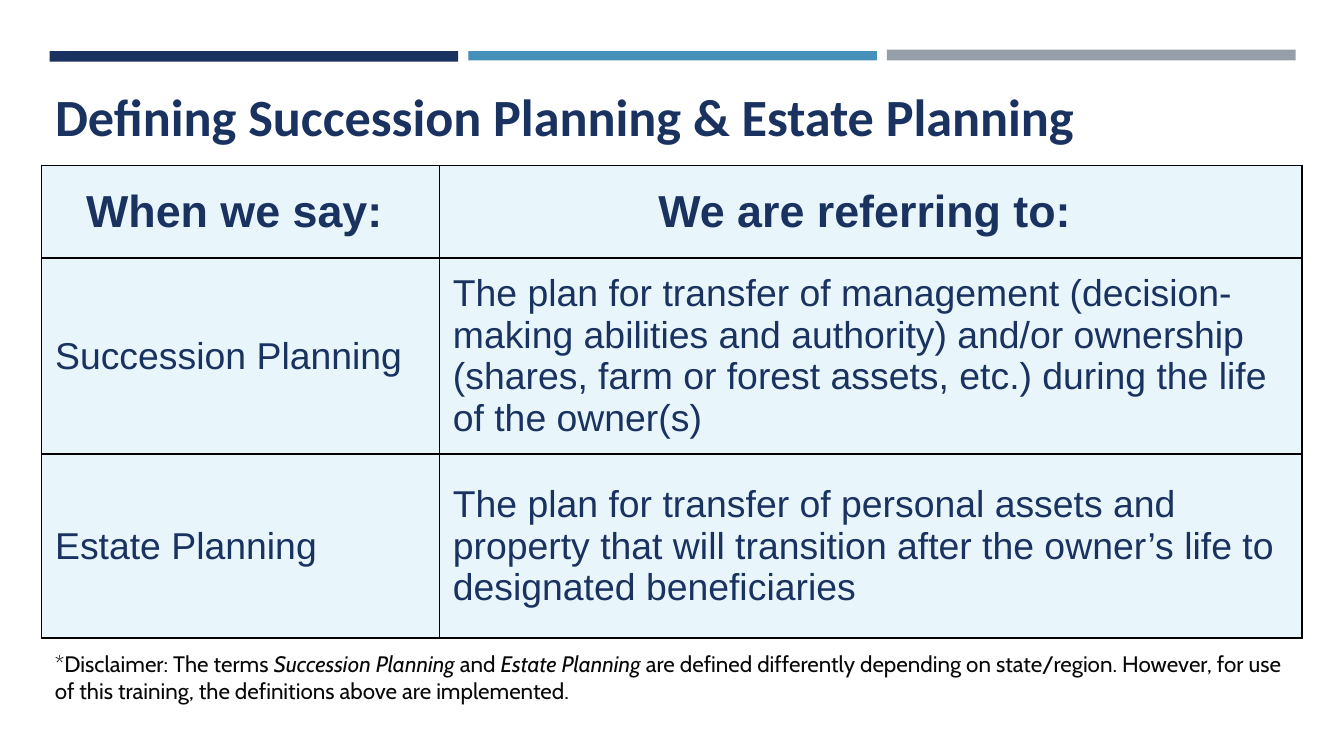
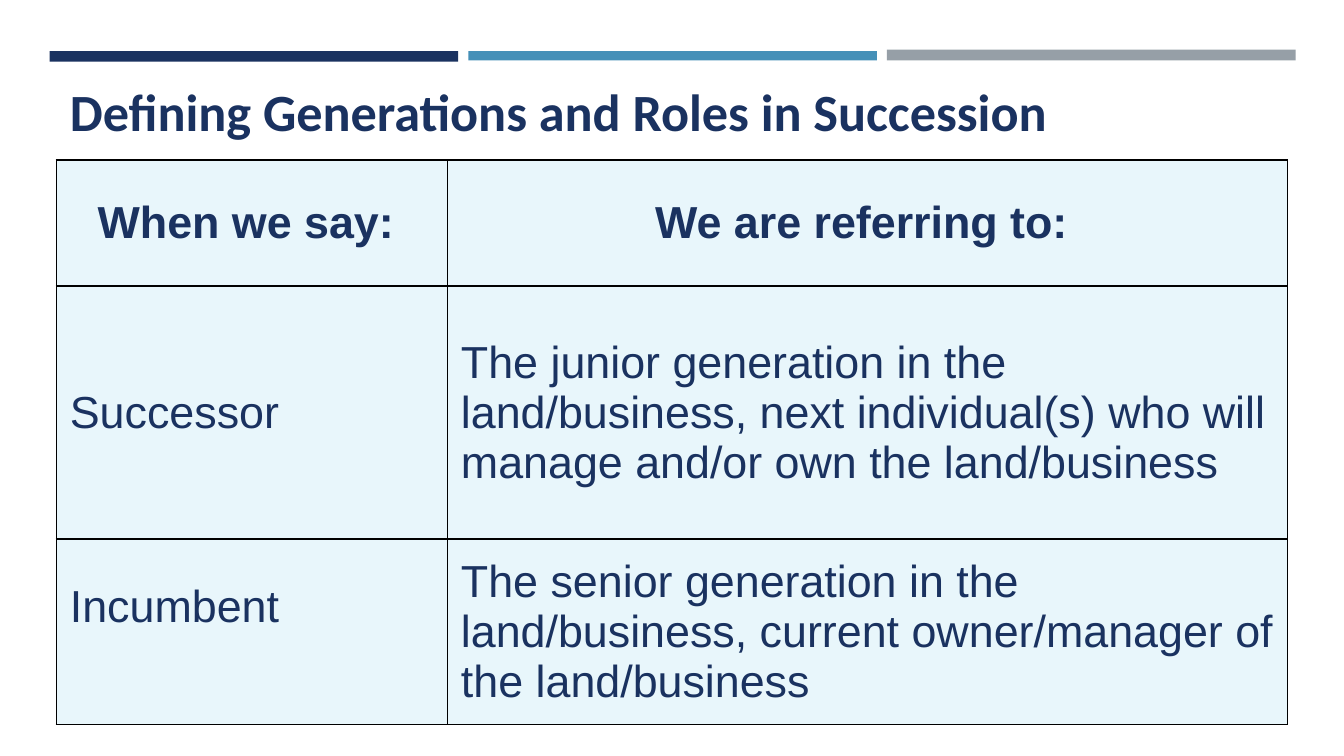
from dataclasses import dataclass

from lxml.etree import SubElement
from pptx import Presentation
from pptx.dml.color import RGBColor
from pptx.enum.shapes import MSO_SHAPE
from pptx.enum.text import MSO_ANCHOR, MSO_AUTO_SIZE, PP_ALIGN
from pptx.oxml.ns import qn
from pptx.presentation import Presentation as PresentationType
from pptx.slide import Slide
from pptx.table import _Cell as Cell
from pptx.text.text import TextFrame, _Paragraph as Paragraph
from pptx.util import Inches, Pt

COLORS = {
    "navy": "1A3260",
    "blue": "4590B8",
    "gray": "969FA7",
    "ice": "E8F6FB",
    "border": "000000",
    "ink": "080808",
}
GRID_COLUMNS = 100
GRID_ROWS = 56.25
SLIDE_WIDTH = Inches(10)
SLIDE_HEIGHT = Inches(5.625)
PADDING = 1
HEADER = ("When we say: ", "We are referring to: ")
HEADER_SIZE = 24


@dataclass(frozen=True)
class Area:
    left: float
    top: float
    width: float
    height: float

    def lengths(self) -> tuple[int, int, int, int]:
        return columns(self.left), rows(self.top), columns(self.width), rows(self.height)


@dataclass(frozen=True)
class Band:
    color: str
    top: float
    height: float


@dataclass(frozen=True)
class Definition:
    term: str
    meaning: str
    term_lift: float = 0


@dataclass(frozen=True)
class DefinitionSlide:
    title: str
    title_area: Area
    table_left: float
    table_top: float
    column_widths: tuple[float, ...]
    row_heights: tuple[float, ...]
    body_size: int
    definitions: tuple[Definition, ...]
    disclaimer: tuple[tuple[str, bool], ...] = ()


BANDS = (Band("navy", 3.8, 0.8), Band("blue", 3.8, 0.7), Band("gray", 3.7, 0.8))
BAND_LEFT = 3.7
BAND_WIDTH = 30.4
BAND_STEP = 31.15
DISCLAIMER_AREA = Area(3.1, 47.4, 93.8, 5)

SLIDES = (
    DefinitionSlide(
        title="Defining Succession Planning & Estate Planning",
        title_area=Area(3.1, 4.6, 93.8, 7.6),
        table_left=3.1,
        table_top=12.3,
        column_widths=(29.6, 64.2),
        row_heights=(6.9, 14.6, 13.7),
        body_size=20,
        definitions=(
            Definition(
                "Succession Planning",
                "The plan for transfer of management (decision-making abilities and "
                "authority) and/or ownership (shares, farm or forest assets, etc.) "
                "during the life of the owner(s)",
            ),
            Definition(
                "Estate Planning",
                "The plan for transfer of personal assets and property that will "
                "transition after the owner’s life to designated beneficiaries",
            ),
        ),
        disclaimer=(
            ("*Disclaimer: The terms ", False),
            ("Succession Planning ", True),
            ("and", False),
            (" Estate Planning ", True),
            (
                "are defined differently depending on state/region. However, for use "
                "of this training, the definitions above are implemented.",
                False,
            ),
        ),
    ),
    DefinitionSlide(
        title="Defining Generations and Roles in Succession",
        title_area=Area(4.2, 4.2, 89.5, 7.6),
        table_left=4.2,
        table_top=11.9,
        column_widths=(29.1, 62.5),
        row_heights=(9.4, 18.8, 13.8),
        body_size=24,
        definitions=(
            Definition(
                "Successor",
                "The junior generation in the land/business, next individual(s) who "
                "will manage and/or own the land/business",
            ),
            Definition(
                "Incumbent",
                "The senior generation in the land/business, current owner/manager "
                "of the land/business",
                term_lift=3.7,
            ),
        ),
    ),
)


def columns(count: float) -> int:
    return round(SLIDE_WIDTH * count / GRID_COLUMNS)


def rows(count: float) -> int:
    return round(SLIDE_HEIGHT * count / GRID_ROWS)


def color(name: str) -> RGBColor:
    return RGBColor.from_string(COLORS[name])


def set_font(paragraph: Paragraph, name: str, size: int, color_name: str, bold: bool = False) -> None:
    font = paragraph.font
    font.name = name
    font.size = Pt(size)
    font.bold = bold
    font.color.rgb = color(color_name)


def set_margins(target: TextFrame | Cell) -> None:
    target.margin_left = target.margin_right = columns(PADDING)
    target.margin_top = target.margin_bottom = rows(PADDING)


def prepare_frame(frame: TextFrame) -> None:
    set_margins(frame)
    frame.word_wrap = True
    frame.auto_size = MSO_AUTO_SIZE.NONE
    frame.vertical_anchor = MSO_ANCHOR.TOP


def draw_bands(slide: Slide) -> None:
    for index, band in enumerate(BANDS):
        area = Area(BAND_LEFT + index * BAND_STEP, band.top, BAND_WIDTH, band.height)
        shape = slide.shapes.add_shape(MSO_SHAPE.RECTANGLE, *area.lengths())
        shape.shadow.inherit = False
        shape.fill.solid()
        shape.fill.fore_color.rgb = color(band.color)
        shape.line.fill.background()


def draw_title(slide: Slide, text: str, area: Area) -> None:
    title = slide.shapes.title
    title.left, title.top, title.width, title.height = area.lengths()
    prepare_frame(title.text_frame)
    title.text_frame.text = text
    paragraph = title.text_frame.paragraphs[0]
    paragraph.alignment = PP_ALIGN.LEFT
    paragraph.line_spacing = 1.15
    set_font(paragraph, "Calibri", 28, "navy", bold=True)


def draw_borders(cell: Cell) -> None:
    properties = cell._tc.get_or_add_tcPr()
    for index, side in enumerate(("a:lnL", "a:lnR", "a:lnT", "a:lnB")):
        line = properties.makeelement(qn(side), {"w": str(Pt(1))})
        fill = SubElement(line, qn("a:solidFill"))
        SubElement(fill, qn("a:srgbClr"), val=COLORS["border"])
        properties.insert(index, line)


def fill_cell(cell: Cell, text: str, size: int, header: bool) -> None:
    cell.text = text
    cell.vertical_anchor = MSO_ANCHOR.MIDDLE
    set_margins(cell)
    cell.fill.solid()
    cell.fill.fore_color.rgb = color("ice")
    draw_borders(cell)
    paragraph = cell.text_frame.paragraphs[0]
    paragraph.alignment = PP_ALIGN.CENTER if header else PP_ALIGN.LEFT
    set_font(paragraph, "Arial", size, "navy", bold=header)


def draw_table(slide: Slide, content: DefinitionSlide) -> None:
    area = Area(
        content.table_left,
        content.table_top,
        sum(content.column_widths),
        sum(content.row_heights),
    )
    table = slide.shapes.add_table(
        len(content.row_heights), len(content.column_widths), *area.lengths()
    ).table
    table.first_row = table.horz_banding = False
    for column, width in zip(table.columns, content.column_widths):
        column.width = columns(width)
    for row, height in zip(table.rows, content.row_heights):
        row.height = rows(height)
    for cell, text in zip(table.rows[0].cells, HEADER):
        fill_cell(cell, text, HEADER_SIZE, header=True)
    for row_index, definition in enumerate(content.definitions, start=1):
        term_cell, meaning_cell = table.rows[row_index].cells
        fill_cell(term_cell, definition.term, content.body_size, header=False)
        fill_cell(meaning_cell, definition.meaning, content.body_size, header=False)
        term_cell.margin_bottom = rows(PADDING + definition.term_lift)


def draw_disclaimer(slide: Slide, parts: tuple[tuple[str, bool], ...]) -> None:
    frame = slide.shapes.add_textbox(*DISCLAIMER_AREA.lengths()).text_frame
    prepare_frame(frame)
    paragraph = frame.paragraphs[0]
    set_font(paragraph, "Cabin", 12, "ink")
    for text, italic in parts:
        run = paragraph.add_run()
        run.text = text
        run.font.italic = italic


def build_slide(presentation: PresentationType, content: DefinitionSlide) -> None:
    slide = presentation.slides.add_slide(presentation.slide_layouts.get_by_name("Title Only"))
    draw_bands(slide)
    draw_title(slide, content.title, content.title_area)
    draw_table(slide, content)
    if content.disclaimer:
        draw_disclaimer(slide, content.disclaimer)


def main() -> None:
    presentation = Presentation()
    presentation.slide_width = SLIDE_WIDTH
    presentation.slide_height = SLIDE_HEIGHT
    for content in SLIDES:
        build_slide(presentation, content)
    presentation.save("out.pptx")


if __name__ == "__main__":
    main()
